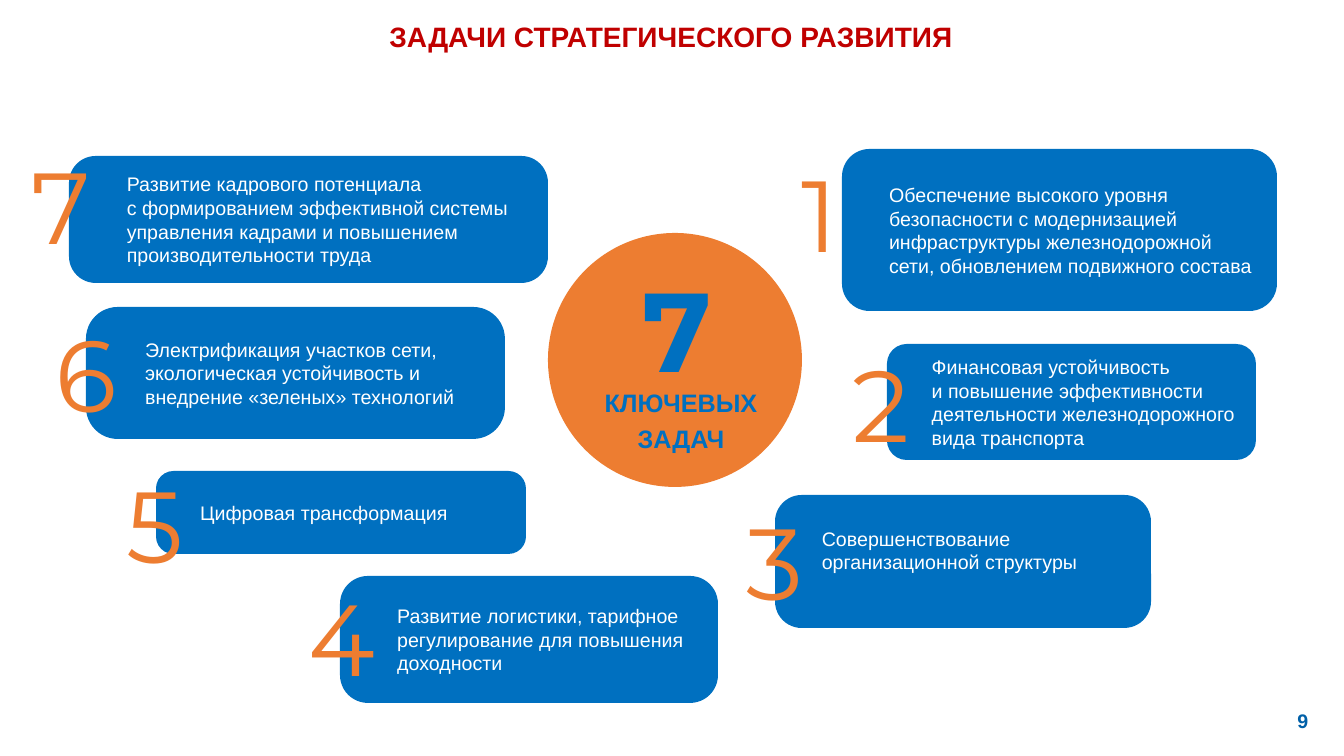
import pptx
import pptx.util
import pptx.dml.color
import pptx.enum.shapes
import pptx.enum.text
from dataclasses import dataclass

TITLE = "ЗАДАЧИ СТРАТЕГИЧЕСКОГО РАЗВИТИЯ"
CENTER_NUMBER = "7"
CENTER_CAPTION = ["КЛЮЧЕВЫХ", "ЗАДАЧ"]
PAGE_NUMBER = "9"

TASKS = [
    dict(number="1", box=(842, 149, 435, 162), numeral=(792, 147), indent=29, corner=0.17,
         lines=["Обеспечение высокого уровня безопасности с модернизацией инфраструктуры "
                "железнодорожной сети, обновлением подвижного состава"]),
    dict(number="2", box=(887, 344, 369, 116), numeral=(843, 337), indent=29, corner=0.17,
         lines=["Финансовая устойчивость",
                "и повышение эффективности деятельности железнодорожного вида транспорта"]),
    dict(number="3", box=(775, 495, 376, 133), numeral=(737, 495), indent=29, corner=0.2,
         lift=23, lines=["Совершенствование организационной структуры"]),
    dict(number="4", box=(340, 576, 378, 127), numeral=(299, 571), indent=39, corner=0.22,
         lines=["Развитие логистики, тарифное регулирование для повышения доходности"]),
    dict(number="5", box=(156, 471, 370, 83), numeral=(117, 458), indent=29, corner=0.21,
         lines=["Цифровая трансформация"]),
    dict(number="6", box=(86, 307, 419, 132), numeral=(46, 307), indent=40, corner=0.24,
         lines=["Электрификация участков сети, экологическая устойчивость и внедрение "
                "«зеленых» технологий"]),
    dict(number="7", box=(69, 156, 479, 127), numeral=(22, 139), indent=40, corner=0.21,
         lines=["Развитие кадрового потенциала",
                "с формированием эффективной системы управления кадрами и повышением "
                "производительности труда"]),
]

SLIDE_SIZE = (1344, 756)
TITLE_BOX = (-1, 4, 1344, 64)
PAGE_BOX = (1282, 705, 42, 32)
CIRCLE_BOX = (548, 233, 254, 254)
CAPTION_BOX = (529, 376, 304, 80)
CENTER_NUMBER_BOX = (633, 256, 96, 146)
NUMERAL_SIZE = (115, 132)
SIDE_INSET, EDGE_INSET = 10, 5


@dataclass(frozen=True)
class Theme:
    blue: str = "0070C0"
    orange: str = "ED7D31"
    red: str = "C00000"
    page_blue: str = "0060A8"
    white: str = "FFFFFF"
    text_font: str = "Arial"
    numeral_font: str = "Montserrat"
    body: int = 14
    caption: int = 18
    title: int = 20
    numeral: int = 72
    center_numeral: int = 80


THEME = Theme()
ALIGN = pptx.enum.text.PP_ALIGN
ANCHOR = pptx.enum.text.MSO_ANCHOR
SHAPE = pptx.enum.shapes.MSO_SHAPE


def px(length):
    return pptx.util.Emu(round(length * 914400 / 100.8))


def place(box):
    return [px(length) for length in box]


def rgb(color):
    return pptx.dml.color.RGBColor.from_string(color)


def add_run(paragraph, text, size, color, font, bold):
    run = paragraph.add_run()
    run.text = text
    run.font.size = pptx.util.Pt(size)
    run.font.name = font
    run.font.bold = bold
    run.font.color.rgb = rgb(color)


def add_text(slide, box, lines, size, color, font=THEME.text_font, bold=False,
             align=ALIGN.LEFT, anchor=ANCHOR.TOP, spacing=1.0):
    frame = slide.shapes.add_textbox(*place(box)).text_frame
    frame.word_wrap = True
    frame.vertical_anchor = anchor
    for index, line in enumerate(lines):
        paragraph = frame.add_paragraph() if index else frame.paragraphs[0]
        paragraph.alignment = align
        paragraph.line_spacing = spacing
        add_run(paragraph, line, size, color, font, bold)


def add_filled(slide, kind, box, color):
    shape = slide.shapes.add_shape(kind, *place(box))
    shape.shadow.inherit = False
    shape.fill.solid()
    shape.fill.fore_color.rgb = rgb(color)
    shape.line.fill.background()
    return shape


def add_task(slide, task):
    shape = add_filled(slide, SHAPE.ROUNDED_RECTANGLE, task["box"], THEME.blue)
    shape.adjustments[0] = task["corner"]
    frame = shape.text_frame
    frame.word_wrap = True
    frame.vertical_anchor = ANCHOR.MIDDLE
    frame.margin_left = px(SIDE_INSET + task["indent"])
    frame.margin_bottom = px(EDGE_INSET + task.get("lift", 0))
    paragraph = frame.paragraphs[0]
    paragraph.alignment = ALIGN.LEFT
    for index, line in enumerate(task["lines"]):
        if index:
            paragraph.add_line_break()
        add_run(paragraph, line, THEME.body, THEME.white, THEME.text_font, False)
    add_text(slide, task["numeral"] + NUMERAL_SIZE, [task["number"]],
             THEME.numeral, THEME.orange, THEME.numeral_font)


def main():
    presentation = pptx.Presentation()
    presentation.slide_width, presentation.slide_height = place(SLIDE_SIZE)
    slide = presentation.slides.add_slide(presentation.slide_layouts[6])
    add_filled(slide, SHAPE.OVAL, CIRCLE_BOX, THEME.orange)
    add_text(slide, CAPTION_BOX, CENTER_CAPTION, THEME.caption, THEME.blue,
             bold=True, align=ALIGN.CENTER, spacing=1.2)
    add_text(slide, PAGE_BOX, [PAGE_NUMBER], THEME.body, THEME.page_blue,
             bold=True, align=ALIGN.CENTER, anchor=ANCHOR.MIDDLE)
    add_text(slide, TITLE_BOX, [TITLE], THEME.title, THEME.red,
             bold=True, align=ALIGN.CENTER, anchor=ANCHOR.MIDDLE)
    for task in TASKS:
        add_task(slide, task)
    add_text(slide, CENTER_NUMBER_BOX, [CENTER_NUMBER], THEME.center_numeral,
             THEME.blue, THEME.numeral_font, bold=True)
    presentation.save("out.pptx")


if __name__ == "__main__":
    main()
